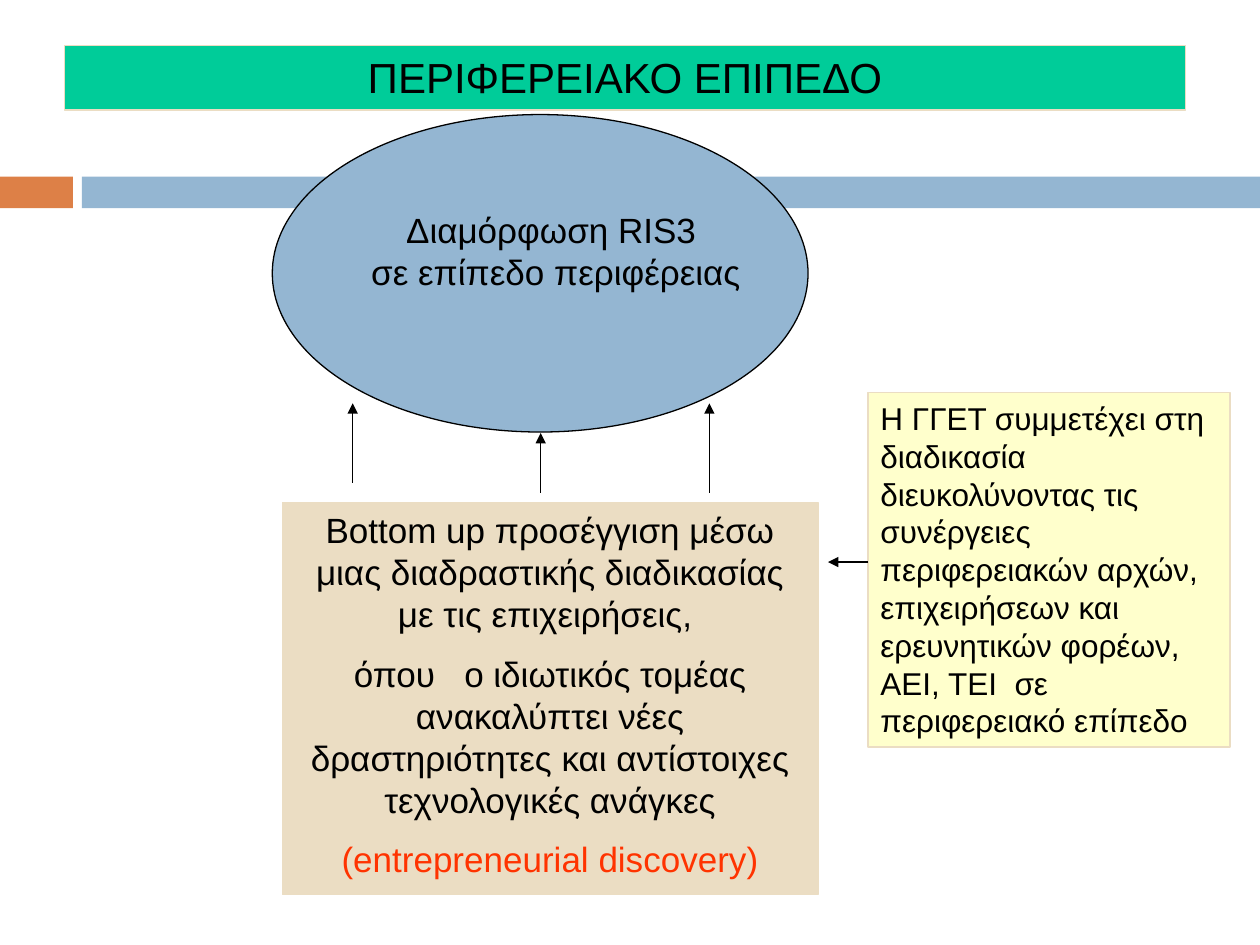
from pptx import Presentation
from pptx.dml.color import RGBColor
from pptx.enum.shapes import MSO_CONNECTOR as Link, MSO_SHAPE as Form
from pptx.enum.text import MSO_ANCHOR as Anchor, MSO_AUTO_SIZE as Fit, PP_ALIGN as Align
from pptx.oxml.ns import qn
from pptx.util import Cm, Pt
from lxml.etree import SubElement

HUES = {
    "orange": "DD8047",
    "blue": "94B6D2",
    "sand": "EBDDC3",
    "green": "00CC99",
    "cream": "FFFFCC",
    "black": "000000",
    "red": "FF3300",
}


class Board:
    font = "Arial"

    def __init__(self, slide):
        self.slide = slide

    def hue(self, name):
        return RGBColor.from_string(HUES[name])

    def shape(self, area, fill, line=None, width=0.75, form=Form.RECTANGLE):
        shape = self.slide.shapes.add_shape(form, *map(Cm, area))
        shape.shadow.inherit = False
        shape.fill.solid()
        shape.fill.fore_color.rgb = self.hue(fill)
        if line:
            shape.line.color.rgb = self.hue(line)
            shape.line.width = Pt(width)
        else:
            shape.line.fill.background()
        return shape

    def text(self, shape, lines, size, align=Align.CENTER, gap=0,
             anchor=Anchor.TOP, wrap=True, fit=Fit.SHAPE_TO_FIT_TEXT):
        frame = shape.text_frame
        frame.word_wrap = wrap
        frame.auto_size = fit
        frame.vertical_anchor = anchor
        for i, (words, tint) in enumerate(lines):
            para = frame.add_paragraph() if i else frame.paragraphs[0]
            para.text = words
            para.alignment = align
            para.space_before = Pt(gap if i else 0)
            para.font.name = self.font
            para.font.size = Pt(size)
            para.font.color.rgb = self.hue(tint)

    def arrow(self, *ends):
        link = self.slide.shapes.add_connector(Link.STRAIGHT, *map(Cm, ends))
        link.line.color.rgb = self.hue("black")
        link.line.width = Pt(0.75)
        SubElement(link.line._get_or_add_ln(), qn("a:tailEnd"), type="triangle")
        SubElement(link._element.spPr, qn("a:effectLst"))


def main():
    deck = Presentation()
    deck.slide_width, deck.slide_height = Cm(25.4), Cm(19.05)
    board = Board(deck.slides.add_slide(deck.slide_layouts[6]))

    board.shape((0, 3.56, 1.47, 0.64), "orange")
    board.shape((1.65, 3.56, 23.75, 0.64), "blue")

    method = board.shape((5.69, 10.13, 10.8, 7.9), "sand", "sand")
    board.text(method, [
        ("Βοttom up προσέγγιση μέσω μιας διαδραστικής διαδικασίας με τις επιχειρήσεις, ", "black"),
        ("όπου   ο ιδιωτικός τομέας ανακαλύπτει νέες δραστηριότητες "
         "και αντίστοιχες τεχνολογικές ανάγκες", "black"),
        ("(entrepreneurial discovery)", "red"),
    ], 20, gap=10)

    board.shape((5.49, 2.31, 10.8, 6.4), "blue", "black", form=Form.OVAL)
    goal = board.shape((7.11, 3.94, 8.2, 2.21), "blue")
    board.text(goal, [
        ("Διαμόρφωση RIS3 ", "black"),
        ("σε επίπεδο περιφέρειας", "black"),
    ], 20, anchor=Anchor.MIDDLE, wrap=False, fit=Fit.NONE)

    for x, low, high in ((10.9, 9.93, 8.73), (7.11, 9.73, 8.13), (14.3, 9.93, 8.13)):
        board.arrow(x, low, x, high)

    title = board.shape((1.3, 0.92, 22.6, 1.3), "green", "sand", 1)
    board.text(title, [("ΠΕΡΙΦΕΡΕΙΑΚΟ ΕΠΙΠΕΔΟ", "black")], 24)

    note = board.shape((17.5, 7.92, 7.3, 7.14), "cream", "sand")
    board.text(note, [
        ("Η ΓΓΕΤ συμμετέχει στη διαδικασία διευκολύνοντας τις συνέργειες "
         "περιφερειακών αρχών, επιχειρήσεων και ερευνητικών φορέων, "
         "ΑΕΙ, ΤΕΙ  σε περιφερειακό επίπεδο", "black"),
    ], 18, Align.LEFT)
    board.arrow(17.5, 11.33, 16.69, 11.33)

    deck.save("out.pptx")


if __name__ == "__main__":
    main()
